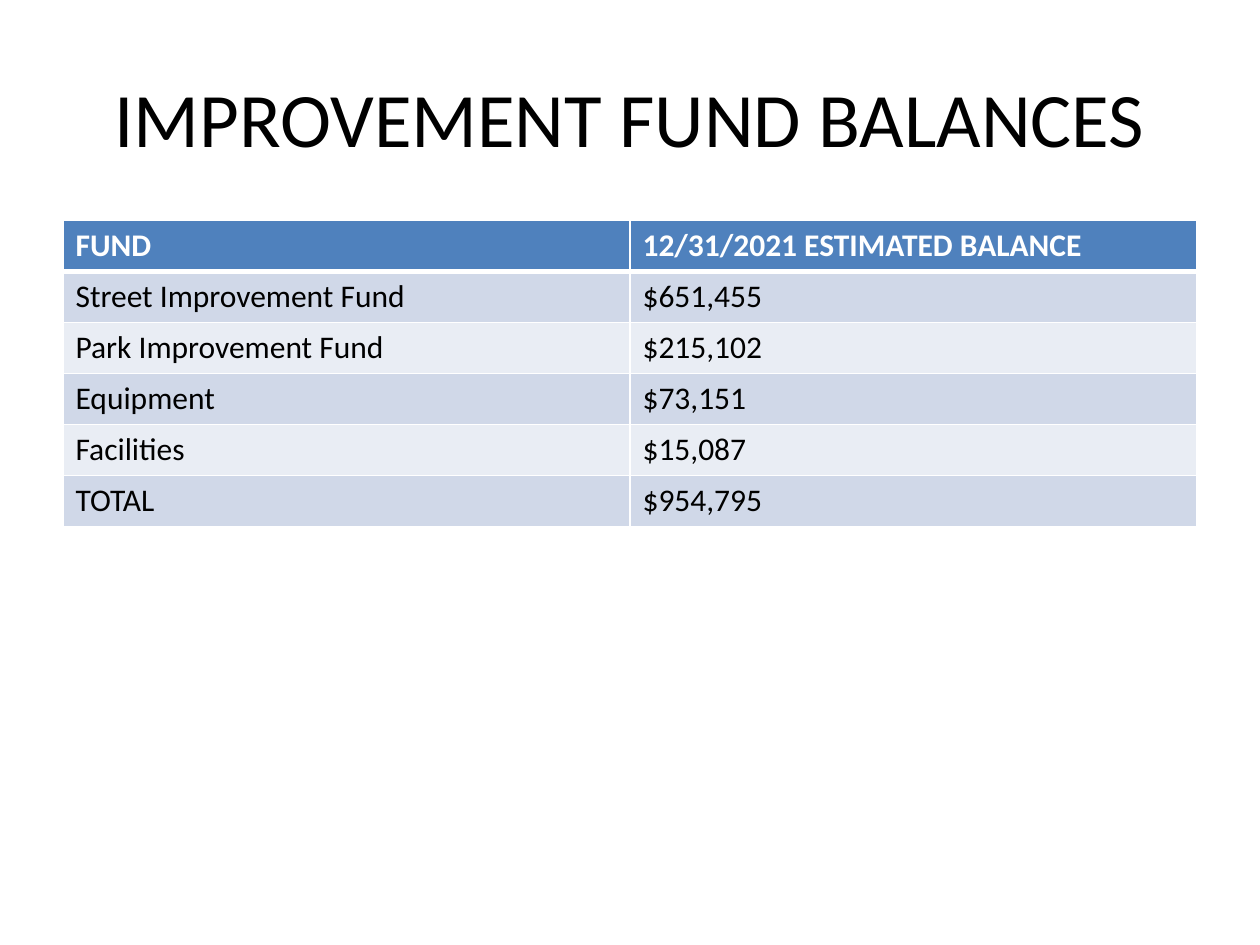
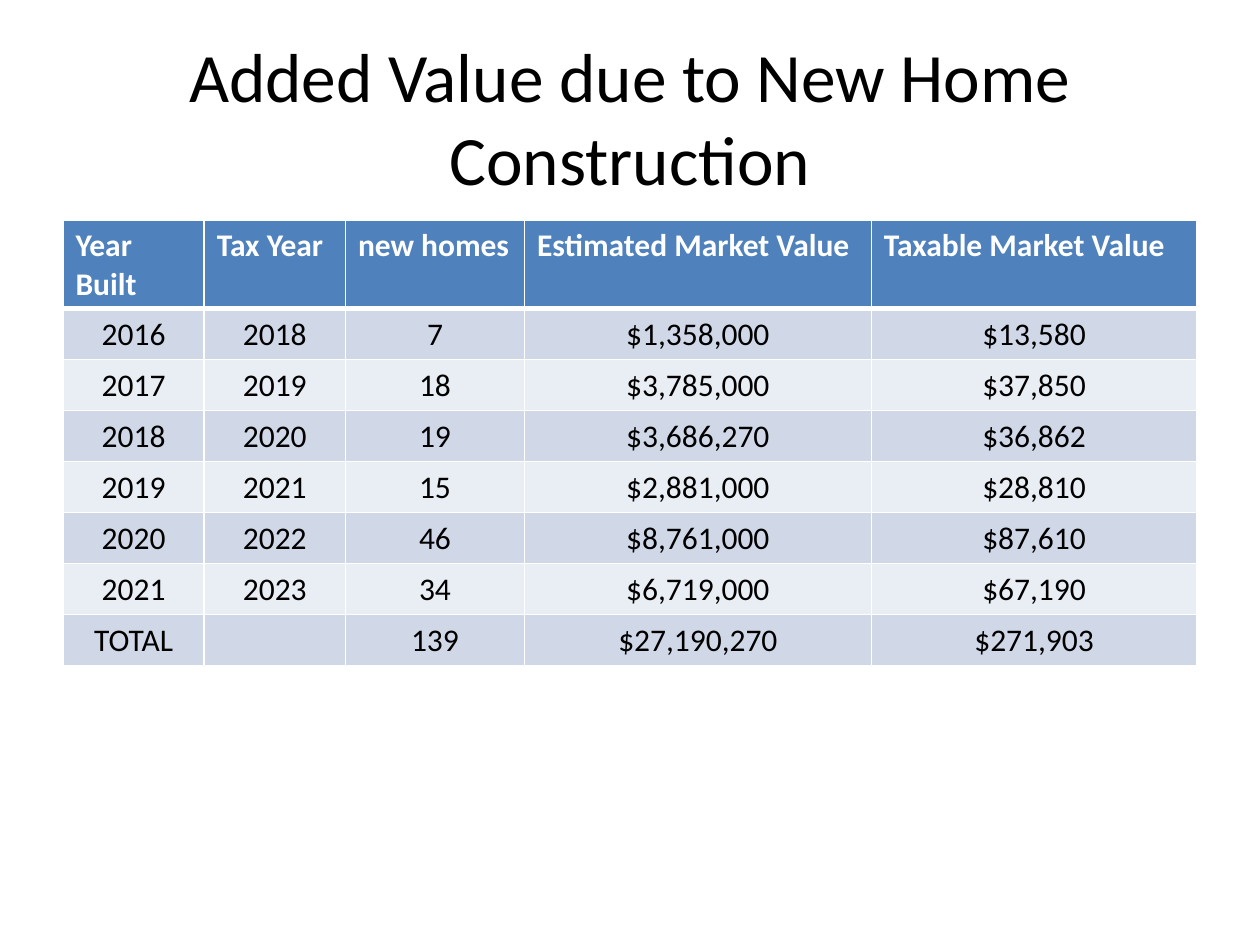
from lxml import etree
from pptx import Presentation
from pptx.dml.color import RGBColor
from pptx.enum.text import MSO_ANCHOR, PP_ALIGN
from pptx.oxml.ns import qn
from pptx.util import Inches, Pt

MIDDLE = MSO_ANCHOR.MIDDLE
LEFT, CENTER = PP_ALIGN.LEFT, PP_ALIGN.CENTER

# Shared style
COLORS = {
    "text": "000000",
    "header": "4F81BD",
    "header_text": "FFFFFF",
    "band_dark": "D0D8E8",
    "band_light": "E9EDF4",
    "border": "FFFFFF",
}
FONT = "Calibri"
BODY_SIZE = 18
THIN, THICK = 1, 3

# Shared layout
SLIDE_WIDTH, SLIDE_HEIGHT = Inches(10), Inches(7.5)
MARGIN = int(SLIDE_WIDTH * 0.05)
CONTENT_WIDTH = SLIDE_WIDTH - 2 * MARGIN
TITLE_TOP, TITLE_HEIGHT = int(SLIDE_HEIGHT * 0.04), Inches(1.25)
TABLE_TOP = Inches(1.75)
ROW_HEIGHT = Inches(0.405)

FUND_BALANCES = [
    ("FUND", "12/31/2021 ESTIMATED BALANCE"),
    ("Street Improvement Fund", "$651,455"),
    ("Park Improvement Fund", "$215,102"),
    ("Equipment", "$73,151"),
    ("Facilities", "$15,087"),
    ("TOTAL", "$954,795"),
]
NEW_HOMES = [
    ("Year Built", "Tax Year", "new homes", "Estimated Market Value",
     "Taxable Market Value"),
    ("2016", "2018", "7", "$1,358,000", "$13,580"),
    ("2017", "2019", "18", "$3,785,000", "$37,850"),
    ("2018", "2020", "19", "$3,686,270", "$36,862"),
    ("2019", "2021", "15", "$2,881,000", "$28,810"),
    ("2020", "2022", "46", "$8,761,000", "$87,610"),
    ("2021", "2023", "34", "$6,719,000", "$67,190"),
    ("TOTAL", "", "139", "$27,190,270", "$271,903"),
]


def write_text(text_frame, text, size, color, align, bold=False):
    text_frame.text = text
    paragraph = text_frame.paragraphs[0]
    paragraph.alignment = align
    for run in paragraph.runs:
        run.font.name = FONT
        run.font.size = Pt(size)
        run.font.bold = bold
        run.font.color.rgb = RGBColor.from_string(COLORS[color])


def add_title(slide, text, size):
    box = slide.shapes.add_textbox(MARGIN, TITLE_TOP, CONTENT_WIDTH, TITLE_HEIGHT)
    box.text_frame.word_wrap = True
    box.text_frame.vertical_anchor = MIDDLE
    write_text(box.text_frame, text, size, "text", CENTER)


def set_borders(cell, top, bottom):
    properties = cell._tc.get_or_add_tcPr()
    for side, width in (("L", THIN), ("R", THIN), ("T", top), ("B", bottom)):
        line = etree.SubElement(properties, qn(f"a:ln{side}"), w=str(Pt(width)))
        fill = etree.SubElement(line, qn("a:solidFill"))
        etree.SubElement(fill, qn("a:srgbClr"), val=COLORS["border"])


def style_cell(cell, text, row, body_align):
    is_header = row == 0
    if is_header:
        fill, color, align = "header", "header_text", LEFT
    else:
        fill = "band_dark" if row % 2 else "band_light"
        color, align = "text", body_align
    set_borders(cell, top=THICK if row == 1 else THIN,
                bottom=THICK if is_header else THIN)
    cell.fill.solid()
    cell.fill.fore_color.rgb = RGBColor.from_string(COLORS[fill])
    write_text(cell.text_frame, text, BODY_SIZE, color, align, bold=is_header)


def add_banded_table(slide, rows, column_shares, body_align):
    """Fill the content width, dividing it in proportion to column_shares."""
    table = slide.shapes.add_table(
        len(rows), len(column_shares), MARGIN, TABLE_TOP,
        CONTENT_WIDTH, ROW_HEIGHT * len(rows)).table
    for column, share in zip(table.columns, column_shares):
        column.width = int(CONTENT_WIDTH * share / sum(column_shares))
    for row, values in enumerate(rows):
        table.rows[row].height = ROW_HEIGHT
        for column, text in enumerate(values):
            style_cell(table.cell(row, column), text, row, body_align)


def main():
    presentation = Presentation()
    presentation.slide_width = SLIDE_WIDTH
    presentation.slide_height = SLIDE_HEIGHT
    blank = presentation.slide_layouts[6]

    # Fund balances
    slide = presentation.slides.add_slide(blank)
    add_title(slide, "IMPROVEMENT FUND BALANCES", 44)
    add_banded_table(slide, FUND_BALANCES, (1, 1), LEFT)

    # Value added by new homes
    slide = presentation.slides.add_slide(blank)
    add_title(slide, "Added Value due to New Home Construction", 39.6)
    add_banded_table(slide, NEW_HOMES, (1.12, 1.12, 1.42, 2.75, 2.58), CENTER)

    presentation.save("out.pptx")


if __name__ == "__main__":
    main()
